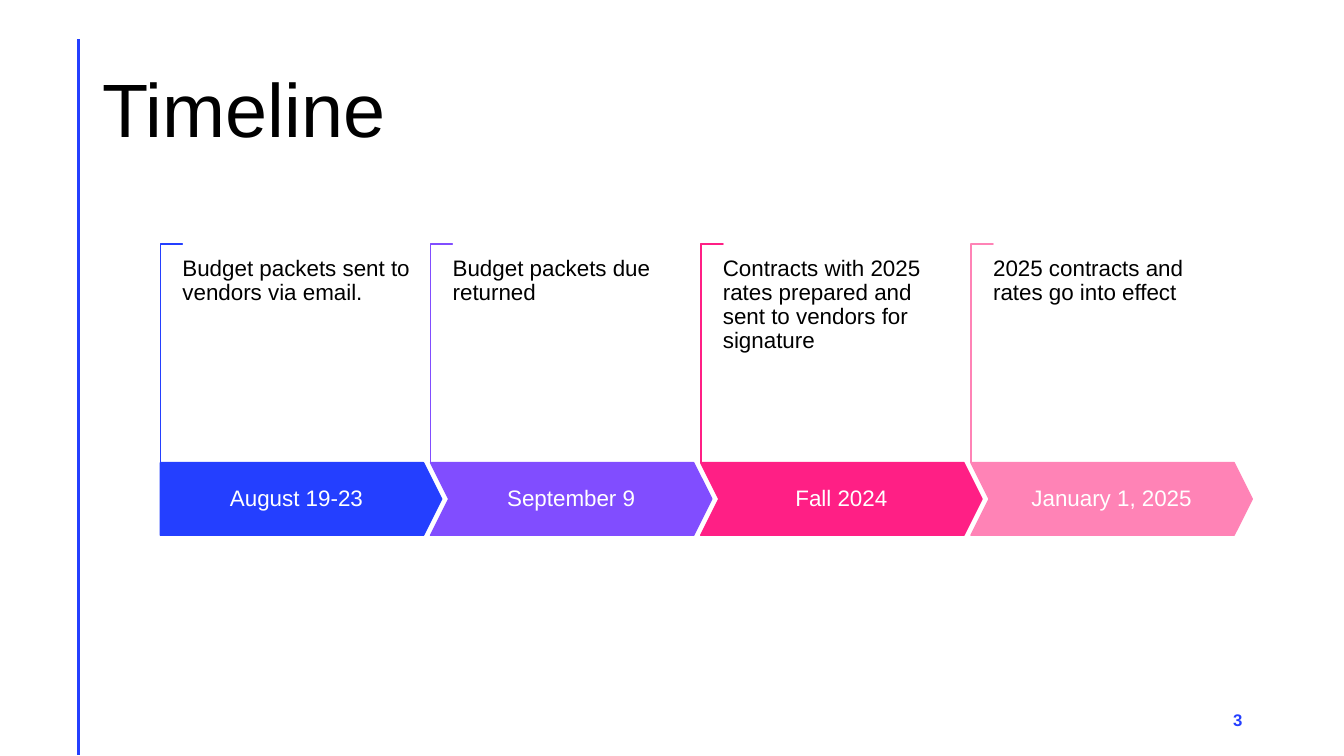
from lxml.etree import SubElement
from pptx import Presentation
from pptx.dml.color import RGBColor
from pptx.enum.shapes import MSO_CONNECTOR, MSO_SHAPE
from pptx.enum.text import MSO_ANCHOR, PP_ALIGN
from pptx.oxml.ns import qn
from pptx.util import Inches, Pt

FONT = "Arial"
BLACK, WHITE, BLUE = "000000", "FFFFFF", "243FFF"
FIRST_LEFT, STEP = 1.59, 2.68
ARROW_TOP, ARROW_WIDTH, ARROW_HEIGHT = 4.59, 2.79, 0.72
BRACKET_LENGTH, BRACKET_DEPTH, BRACKET_TOP = 2.17, 0.22, 2.42

MILESTONES = [
    ("August 19-23", "Budget packets sent to vendors via email.", BLUE),
    ("September 9", "Budget packets due returned", "814DFF"),
    ("Fall 2024", "Contracts with 2025 rates prepared and sent to vendors for signature", "FF1F85"),
    ("January 1, 2025", "2025 contracts and rates go into effect", "FF83B6"),
]


def color(hex_string):
    return RGBColor.from_string(hex_string)


def write_text(shape, text, size, text_color, align=PP_ALIGN.LEFT,
               anchor=MSO_ANCHOR.MIDDLE, margins=(0.1, 0.05), bold=False):
    """Fill a shape with one paragraph; margins are horizontal and vertical inches."""
    frame = shape.text_frame
    frame.word_wrap = True
    frame.vertical_anchor = anchor
    frame.margin_left = frame.margin_right = Inches(margins[0])
    frame.margin_top = frame.margin_bottom = Inches(margins[1])
    paragraph = frame.paragraphs[0]
    paragraph.alignment = align
    paragraph.line_spacing = 0.9
    run = paragraph.add_run()
    run.text = text
    run.font.name = FONT
    run.font.size = Pt(size)
    run.font.bold = bold
    run.font.color.rgb = color(text_color)


def add_text(slide, left, top, width, height, text, size, text_color, **options):
    box = slide.shapes.add_textbox(Inches(left), Inches(top), Inches(width), Inches(height))
    write_text(box, text, size, text_color, **options)


def add_shape(slide, kind, left, top, width, height, fill, line, adjustments):
    shape = slide.shapes.add_shape(kind, Inches(left), Inches(top), Inches(width), Inches(height))
    for index, value in enumerate(adjustments):
        shape.adjustments[index] = value
    shape.shadow.inherit = False
    shape.fill.solid()
    shape.fill.fore_color.rgb = color(fill)
    shape.line.color.rgb = color(line)
    shape.line.width = Pt(1)
    return shape


def add_side_line(slide):
    line = slide.shapes.add_connector(
        MSO_CONNECTOR.STRAIGHT, Inches(0.78), Inches(0.39), Inches(0.78), Inches(7.49))
    line.line.color.rgb = color(BLUE)
    line.line.width = Pt(2)
    SubElement(line._element.spPr, qn("a:effectLst"))


def add_bracket(slide, left, line_color):
    """Draw a corner turned a quarter, so its visible box starts at left and BRACKET_TOP."""
    turn_offset = (BRACKET_LENGTH - BRACKET_DEPTH) / 2
    bracket = add_shape(slide, MSO_SHAPE.CORNER, left - turn_offset, BRACKET_TOP + turn_offset,
                        BRACKET_LENGTH, BRACKET_DEPTH, WHITE, line_color, (0.01, 0.01))
    bracket.rotation = 90


def add_milestone(slide, index, date, description, accent):
    left = FIRST_LEFT + index * STEP
    add_bracket(slide, left, accent)
    kind = MSO_SHAPE.CHEVRON if index else MSO_SHAPE.PENTAGON
    arrow = add_shape(slide, kind, left, ARROW_TOP, ARROW_WIDTH, ARROW_HEIGHT,
                      accent, accent, (0.25,))
    write_text(arrow, date, 16, WHITE, align=PP_ALIGN.CENTER, margins=(0.11, 0.22))
    add_text(slide, left + 0.22, 2.55, 2.26, 1.52, description, 16, BLACK,
             anchor=MSO_ANCHOR.TOP, margins=(0, 0))


def main():
    presentation = Presentation()
    presentation.slide_width = Inches(13.33)
    presentation.slide_height = Inches(7.5)
    slide = presentation.slides.add_slide(presentation.slide_layouts[6])
    add_side_line(slide)
    add_text(slide, 0.92, 0.4, 11.5, 1.45, "Timeline", 54, BLACK)
    add_text(slide, 9.42, 6.95, 3, 0.4, "3", 12, BLUE, align=PP_ALIGN.RIGHT, bold=True)
    for index, milestone in enumerate(MILESTONES):
        add_milestone(slide, index, *milestone)
    presentation.save("out.pptx")


if __name__ == "__main__":
    main()
